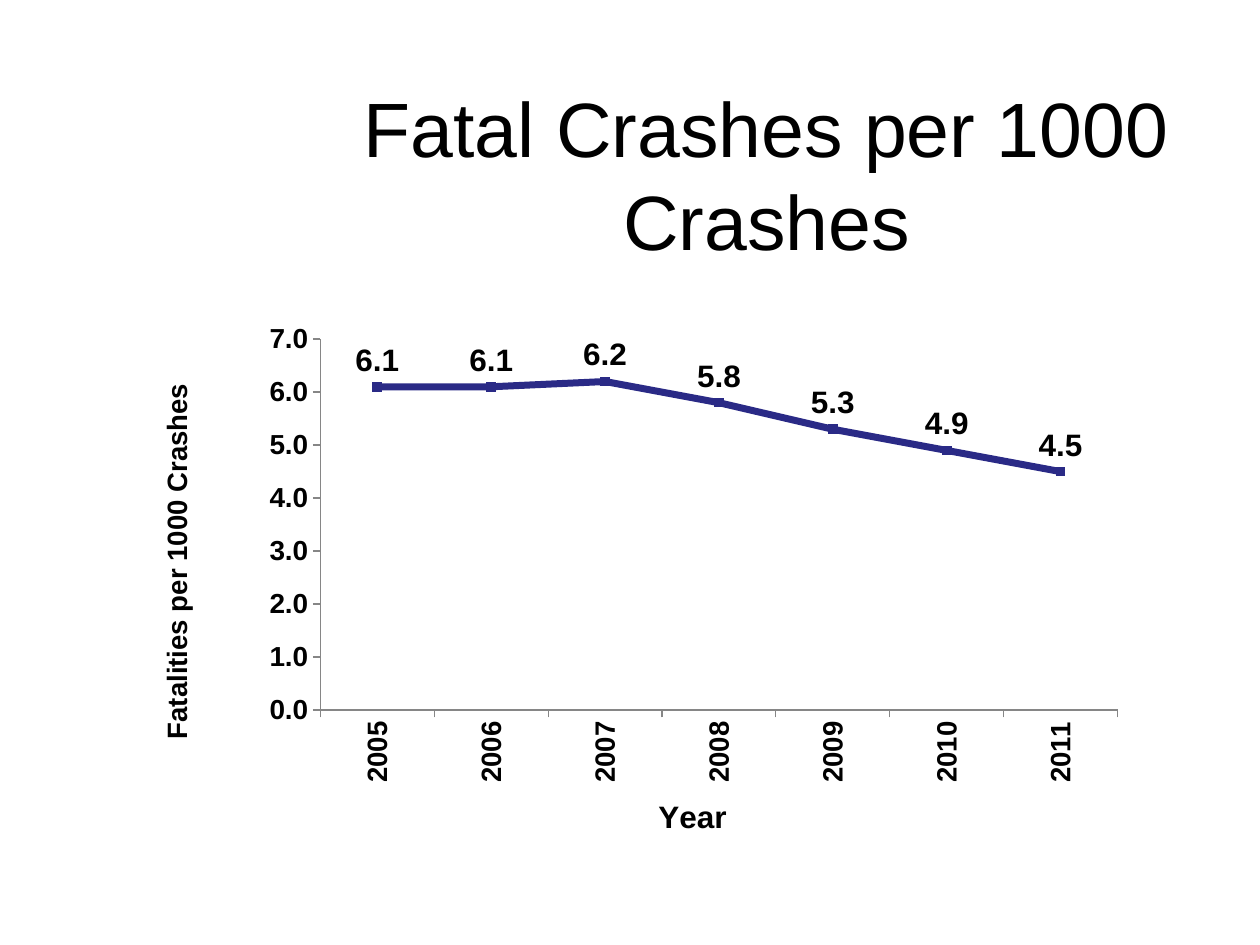
import pptx
import pptx.chart.data
import pptx.dml.color
import pptx.enum.chart
import pptx.enum.text
import pptx.oxml
import pptx.oxml.ns
import pptx.util

Pt = pptx.util.Pt
enum = pptx.enum.chart
qn = pptx.oxml.ns.qn

COLORS = {"text": "000000", "line": "2A2A86", "axis": "868686"}
YEARS = [str(year) for year in range(2005, 2012)]
RATES = [6.1, 6.1, 6.2, 5.8, 5.3, 4.9, 4.5]


def color(name):
    return pptx.dml.color.RGBColor.from_string(COLORS[name])


def assign(item, **values):
    for key, value in values.items():
        setattr(item, key, value)


def place(parent, index, **values):
    """Give a chart part a manual layout, in fractions of the chart."""
    for old in parent.findall(qn("c:layout")):
        parent.remove(old)
    tags = "".join(f'<c:{key} val="{value}"/>' for key, value in values.items())
    space = pptx.oxml.ns.nsdecls("c")
    parent.insert(index, pptx.oxml.parse_xml(
        f"<c:layout {space}><c:manualLayout>{tags}</c:manualLayout></c:layout>"))


class Deck:
    def __init__(self, font):
        self.font = font
        self.file = pptx.Presentation()
        assign(self.file, slide_width=Pt(720), slide_height=Pt(540))
        self.slide = self.file.slides.add_slide(self.file.slide_layouts[5])

    def style(self, font, size, bold=False):
        assign(font, name=self.font, size=Pt(size), bold=bold)
        font.color.rgb = color("text")

    def title(self, text, left, top, width, height):
        shape = self.slide.shapes.title
        assign(shape, left=Pt(left), top=Pt(top), width=Pt(width), height=Pt(height))
        frame = shape.text_frame
        assign(frame, text=text, word_wrap=True,
               auto_size=pptx.enum.text.MSO_AUTO_SIZE.NONE,
               vertical_anchor=pptx.enum.text.MSO_ANCHOR.MIDDLE)
        line = frame.paragraphs[0]
        line.alignment = pptx.enum.text.PP_ALIGN.CENTER
        self.style(line.runs[0].font, 44)

    def chart(self, cats, name, values, left, top, width, height):
        data = pptx.chart.data.CategoryChartData(number_format="0.0")
        data.categories = cats
        data.add_series(name, values)
        chart = self.slide.shapes.add_chart(
            enum.XL_CHART_TYPE.LINE_MARKERS,
            Pt(left), Pt(top), Pt(width), Pt(height), data).chart
        assign(chart, has_legend=False, has_title=False)
        self.style(chart.font, 10)
        chart.plots[0].vary_by_categories = False
        place(chart._chartSpace.chart.plotArea, 0, layoutTarget="inner",
              xMode="edge", yMode="edge", x=0.227, y=0.101, w=0.703, h=0.673)
        return chart

    def axis(self, axis, text, size, x, y):
        assign(axis, has_major_gridlines=False, has_title=True,
               major_tick_mark=enum.XL_TICK_MARK.OUTSIDE,
               minor_tick_mark=enum.XL_TICK_MARK.NONE)
        axis.format.line.color.rgb = color("axis")
        axis.format.line.width = Pt(0.75)
        self.style(axis.tick_labels.font, 16, True)
        title = axis.axis_title
        title.text_frame.text = text
        self.style(title.text_frame.paragraphs[0].runs[0].font, size, True)
        place(title._element, 1, xMode="edge", yMode="edge", x=x, y=y)

    def series(self, series):
        series.smooth = False
        series.format.line.color.rgb = color("line")
        series.format.line.width = Pt(4)
        marker = series.marker
        assign(marker, style=enum.XL_MARKER_STYLE.SQUARE, size=5)
        marker.format.fill.solid()
        marker.format.fill.fore_color.rgb = color("line")
        marker.format.line.color.rgb = color("line")
        labels = series.data_labels
        assign(labels, show_value=True, number_format="0.0",
               number_format_is_linked=False,
               position=enum.XL_LABEL_POSITION.ABOVE)
        self.style(labels.font, 18, True)


def turn(body):
    """Make text read upwards."""
    body.set("rot", "-5400000")
    body.set("vert", "horz")


def main():
    deck = Deck("Arial")
    deck.title("Fatal Crashes per 1000 Crashes", 192, 54, 492, 90)
    chart = deck.chart(YEARS, "Series 1", RATES, 36, 162, 648, 320.4)
    years, rates = chart.category_axis, chart.value_axis
    deck.axis(years, "Year", 18, 0.52, 0.92)
    deck.axis(rates, "Fatalities per 1000 Crashes ", 16, 0.08, 0.17)
    turn(years._element.find(qn("c:txPr")).find(qn("a:bodyPr")))
    turn(rates.axis_title.text_frame._txBody.find(qn("a:bodyPr")))
    assign(rates, minimum_scale=0, maximum_scale=7, major_unit=1)
    assign(rates.tick_labels, number_format="0.0", number_format_is_linked=False)
    deck.series(chart.plots[0].series[0])
    deck.file.save("out.pptx")


if __name__ == "__main__":
    main()
